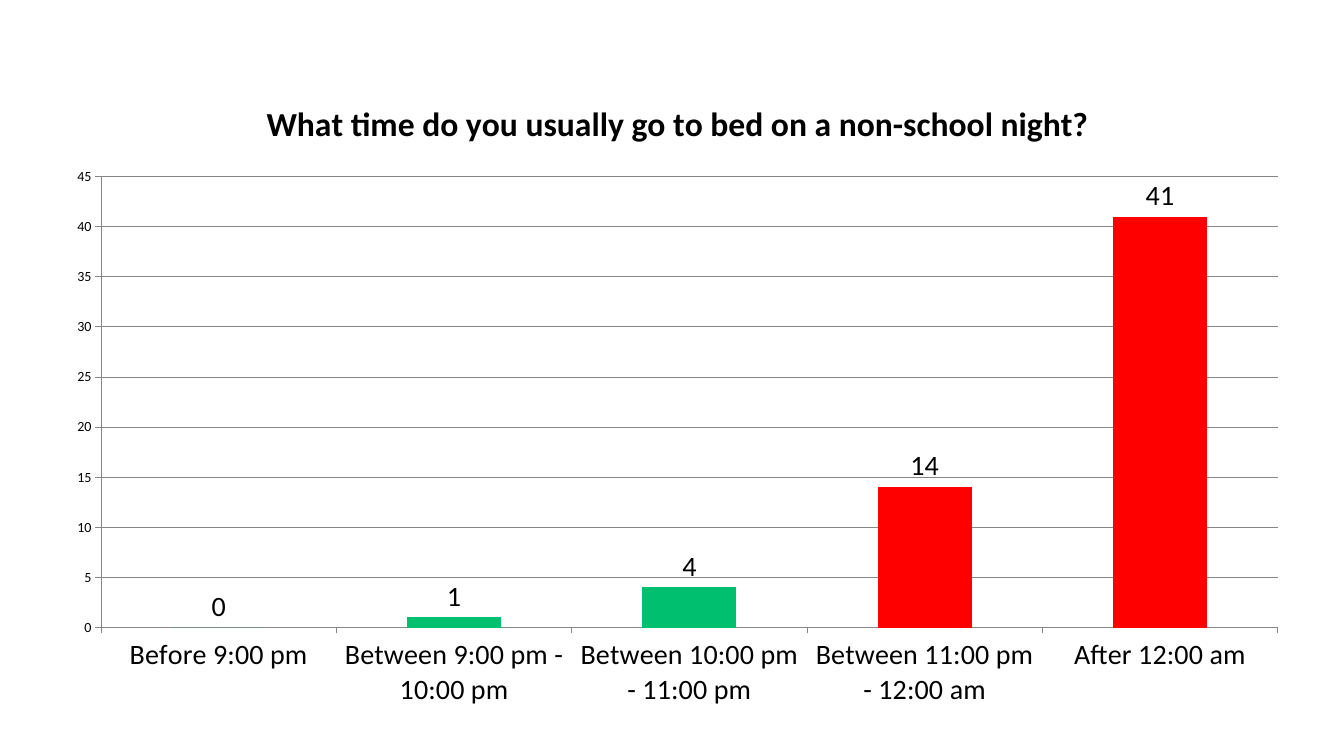
import pptx
import pptx.chart.data
import pptx.dml.color
import pptx.enum.chart
import pptx.util
from pptx.util import Inches

FONT = "Calibri"
BLACK, GRID_GRAY, GREEN, RED = "000000", "878787", "00BF6F", "FF0000"
QUESTION = "What time do you usually go to bed on a non-school night?"
BEDTIMES = {
    "Before 9:00 pm": 0,
    "Between 9:00 pm - 10:00 pm": 1,
    "Between 10:00 pm - 11:00 pm": 4,
    "Between 11:00 pm - 12:00 am": 14,
    "After 12:00 am": 41,
}
LATE_BEDTIMES = (3, 4)


def color(hex_string):
    return pptx.dml.color.RGBColor.from_string(hex_string)


def format_font(font, size, bold=False):
    font.name = FONT
    font.size = pptx.util.Pt(size)
    font.bold = bold
    font.color.rgb = color(BLACK)


def fill_solid(format_object, hex_string):
    format_object.fill.solid()
    format_object.fill.fore_color.rgb = color(hex_string)


def format_line(line):
    line.color.rgb = color(GRID_GRAY)
    line.width = pptx.util.Pt(0.75)


def format_axis(axis, size, gridlines):
    axis.has_major_gridlines = gridlines
    axis.major_tick_mark = pptx.enum.chart.XL_TICK_MARK.OUTSIDE
    axis.minor_tick_mark = pptx.enum.chart.XL_TICK_MARK.NONE
    format_font(axis.tick_labels.font, size)
    format_line(axis.format.line)
    if gridlines:
        format_line(axis.major_gridlines.format.line)


def add_title(chart, text):
    chart.has_title = True
    paragraph = chart.chart_title.text_frame.paragraphs[0]
    paragraph.text = text
    format_font(paragraph.runs[0].font, 24, bold=True)
    chart.chart_title.include_in_layout = False


def format_columns(plot):
    plot.gap_width = 150
    plot.vary_by_categories = False
    series = plot.series[0]
    series.invert_if_negative = False
    fill_solid(series.format, GREEN)
    for index in LATE_BEDTIMES:
        fill_solid(series.points[index].format, RED)
    labels = series.data_labels
    labels.show_value = True
    labels.position = pptx.enum.chart.XL_LABEL_POSITION.OUTSIDE_END
    format_font(labels.font, 20)


def add_bedtime_chart(slide):
    data = pptx.chart.data.CategoryChartData()
    data.categories = list(BEDTIMES)
    data.add_series("Series 1", list(BEDTIMES.values()))
    chart = slide.shapes.add_chart(
        pptx.enum.chart.XL_CHART_TYPE.COLUMN_CLUSTERED,
        Inches(0.52), Inches(0.76), Inches(12.4), Inches(6.38), data,
    ).chart
    chart.has_legend = False
    format_font(chart.font, 10)
    add_title(chart, QUESTION)
    format_axis(chart.category_axis, 20, gridlines=False)
    format_axis(chart.value_axis, 10, gridlines=True)
    format_columns(chart.plots[0])


def main():
    presentation = pptx.Presentation()
    presentation.slide_width = Inches(13.33)
    presentation.slide_height = Inches(7.5)
    blank_layout = presentation.slide_layouts[6]
    slide = presentation.slides.add_slide(blank_layout)
    add_bedtime_chart(slide)
    presentation.save("out.pptx")


if __name__ == "__main__":
    main()
